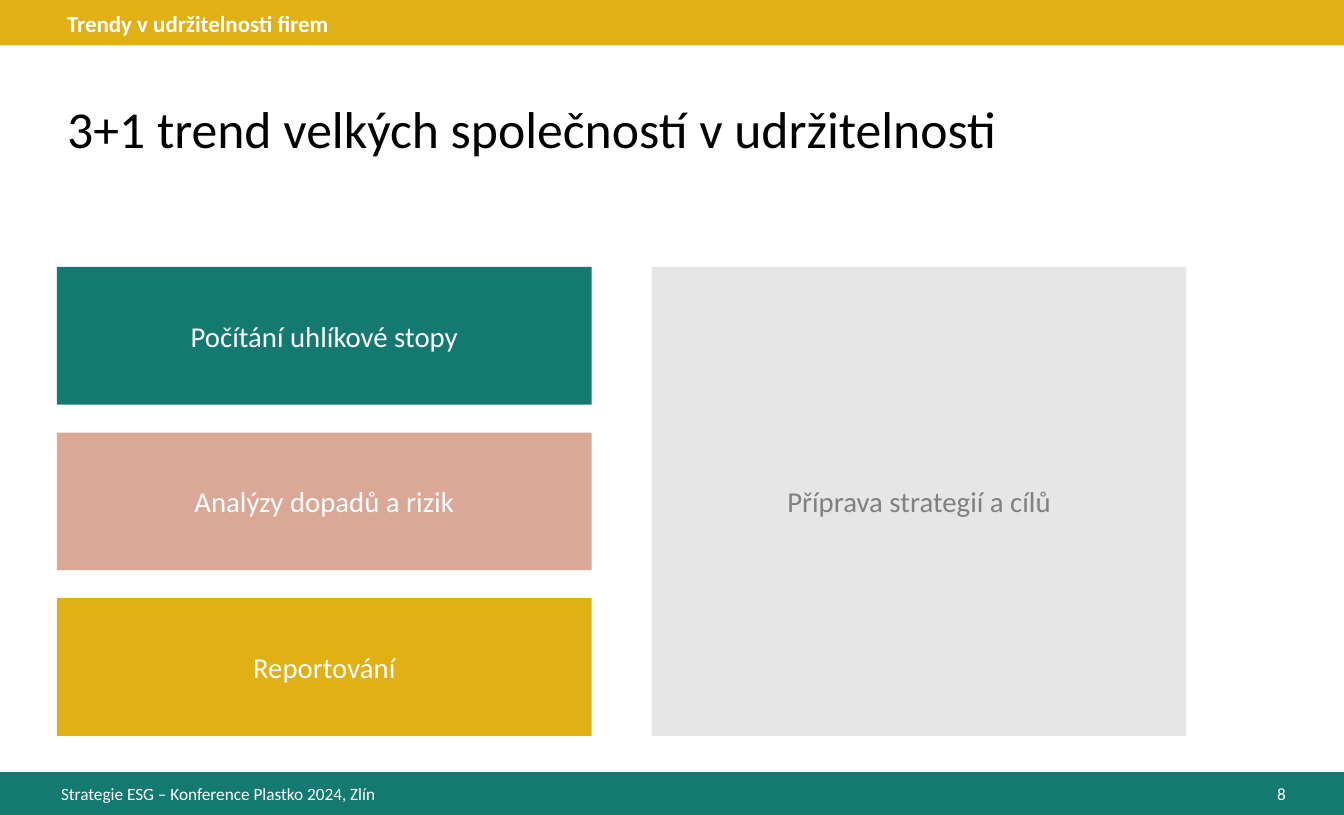
"""Build the slide on sustainability trends of large companies."""
from dataclasses import dataclass

from pptx import Presentation
from pptx.dml.color import RGBColor
from pptx.enum.shapes import MSO_SHAPE as Shape
from pptx.enum.text import MSO_ANCHOR as Anchor, PP_ALIGN as Align
from pptx.util import Cm, Inches, Pt


@dataclass(frozen=True)
class Theme:
    font: str = "Calibri"
    teal: str = "147970"
    rose: str = "DBA898"
    gold: str = "E1B015"
    pale: str = "E7E6E6"
    gray: str = "808080"
    white: str = "FFFFFF"
    black: str = "000000"
    title_size: int = 36
    card_size: int = 20
    header_size: int = 16
    footer_size: int = 12


THEME = Theme()

SECTION = "Trendy v udržitelnosti firem"
TITLE = "3+1 trend velkých společností v udržitelnosti"
TRENDS = [
    ("Počítání uhlíkové stopy", THEME.teal),
    ("Analýzy dopadů a rizik", THEME.rose),
    ("Reportování", THEME.gold),
]
OUTCOME = "Příprava strategií a cílů"
FOOTER = "Strategie ESG – Konference Plastko 2024, Zlín"
PAGE = "8"

WIDTH, HEIGHT = Cm(33), Cm(20)
LEFT, TOP = 0.55, 2.58
CARD_W, CARD_H = 5.17, 1.33
COLUMN_STEP, ROW_STEP = 5.75, 1.6
BAR_H, FOOTER_TOP = 0.44, 7.46


def write(holder, text, size, color, align=Align.LEFT, anchor=Anchor.MIDDLE,
          bold=False, spacing=1.0):
    frame = holder.text_frame
    frame.word_wrap = True
    frame.vertical_anchor = anchor
    paragraph = frame.paragraphs[0]
    paragraph.text = text
    paragraph.alignment = align
    paragraph.line_spacing = spacing
    font = paragraph.font
    font.name, font.size, font.bold = THEME.font, Pt(size), bold
    font.color.rgb = RGBColor.from_string(color)
    return frame


def add_block(slide, box, fill):
    block = slide.shapes.add_shape(Shape.RECTANGLE, *map(Inches, box))
    block.shadow.inherit = False
    block.fill.solid()
    block.fill.fore_color.rgb = RGBColor.from_string(fill)
    block.line.fill.background()
    return block


def add_card(slide, column, text, fill, color, row=0, rows=1):
    box = (LEFT + column * COLUMN_STEP, TOP + row * ROW_STEP,
           CARD_W, CARD_H + (rows - 1) * ROW_STEP)
    write(add_block(slide, box, fill), text, THEME.card_size, color, Align.CENTER)


def add_label(slide, box, *args, **kwargs):
    label = slide.shapes.add_textbox(*map(Inches, box))
    return write(label, *args, **kwargs)


def main():
    deck = Presentation()
    deck.slide_width, deck.slide_height = WIDTH, HEIGHT
    slide = deck.slides.add_slide(deck.slide_layouts[5])

    for top, fill in ((FOOTER_TOP, THEME.teal), (0, THEME.gold)):
        add_block(slide, (0, top, WIDTH.inches, BAR_H), fill)

    footer = add_label(slide, (LEFT, 7.57, 4.26, 0.2), FOOTER,
                       THEME.footer_size, THEME.white, anchor=Anchor.TOP)
    footer.margin_left = footer.margin_right = Inches(0.04)
    footer.margin_top = footer.margin_bottom = 0
    add_label(slide, (11.87, 7.54, 0.66, 0.26), PAGE,
              THEME.footer_size, THEME.white, Align.RIGHT)
    add_label(slide, (LEFT, 0.07, 9.74, 0.33), SECTION, THEME.header_size,
              THEME.white, anchor=Anchor.TOP, bold=True, spacing=0.9)

    for row, (trend, fill) in enumerate(TRENDS):
        add_card(slide, 0, trend, fill, THEME.white, row=row)
    add_card(slide, 1, OUTCOME, THEME.pale, THEME.gray, rows=len(TRENDS))

    title = slide.shapes.title
    title.left, title.top = Inches(LEFT), Inches(0.65)
    title.width, title.height = Inches(11.21), Inches(1.25)
    write(title, TITLE, THEME.title_size, THEME.black, spacing=0.9)

    deck.save("out.pptx")


if __name__ == "__main__":
    main()
